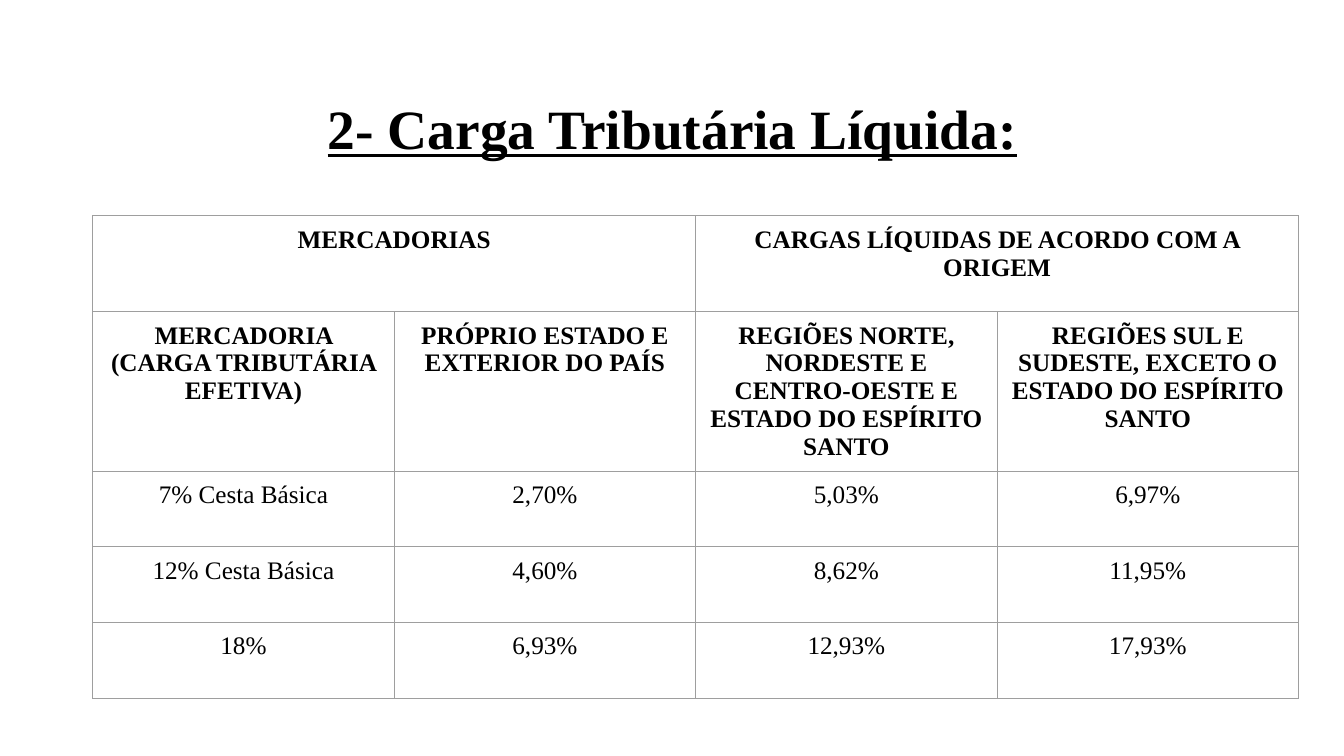
import pptx
import pptx.util
import pptx.dml.color
import pptx.enum.text
import pptx.oxml
import pptx.oxml.ns
import lxml.etree

Inches, Pt = pptx.util.Inches, pptx.util.Pt
BLACK = pptx.dml.color.RGBColor(0x00, 0x00, 0x00)
WHITE = pptx.dml.color.RGBColor(0xFF, 0xFF, 0xFF)
GREY = pptx.dml.color.RGBColor(0x9E, 0x9E, 0x9E)
FONT = "Times New Roman"
CENTER = pptx.enum.text.PP_ALIGN.CENTER

LEFT = 0.92
COL_WIDTH = 2.99
ROW_HEIGHTS = [0.95, 1.58, 0.75, 0.75, 0.75]
ROWS = [
    ["MERCADORIAS", "", "CARGAS LÍQUIDAS DE ACORDO COM A ORIGEM", ""],
    ["MERCADORIA (CARGA TRIBUTÁRIA EFETIVA)",
     "PRÓPRIO ESTADO E EXTERIOR DO PAÍS",
     "REGIÕES NORTE, NORDESTE E CENTRO-OESTE E ESTADO DO ESPÍRITO SANTO",
     "REGIÕES SUL E SUDESTE, EXCETO O ESTADO DO ESPÍRITO SANTO"],
    ["7% Cesta Básica", "2,70%", "5,03%", "6,97%"],
    ["12% Cesta Básica", "4,60%", "8,62%", "11,95%"],
    ["18%", "6,93%", "12,93%", "17,93%"],
]
HEADER_ROWS = 2


def format_paragraph(p, size, bold):
    p.alignment = CENTER
    for r in p.runs:
        r.font.name = FONT
        r.font.size = Pt(size)
        r.font.bold = bold
        r.font.color.rgb = BLACK


def add_borders(cell):
    tcPr = cell._tc.get_or_add_tcPr()
    for i, side in enumerate(("lnL", "lnR", "lnT", "lnB")):
        ln = pptx.oxml.parse_xml(
            f'<a:{side} xmlns:a="http://schemas.openxmlformats.org/drawingml/2006/main" '
            f'w="{Pt(0.75)}"><a:solidFill><a:srgbClr val="{GREY}"/></a:solidFill></a:{side}>')
        tcPr.insert(i, ln)


prs = pptx.Presentation()
prs.slide_width = Inches(13.33)
prs.slide_height = Inches(7.5)
s = prs.slides.add_slide(prs.slide_layouts[5])
s.background.fill.solid()
s.background.fill.fore_color.rgb = WHITE

# Title
title = s.shapes.title
title.left, title.top = Inches(LEFT), Inches(0.85)
title.width, title.height = Inches(11.5), Inches(0.9)
tf = title.text_frame
tf.text = "2- Carga Tributária Líquida:"
tf.word_wrap = True
tf.vertical_anchor = pptx.enum.text.MSO_ANCHOR.MIDDLE
p = tf.paragraphs[0]
p.line_spacing = 0.9
format_paragraph(p, 39.6, True)
p.runs[0].font.underline = True

# Table of net tax rates
table = s.shapes.add_table(
    len(ROWS), len(ROWS[0]), Inches(LEFT), Inches(2.14),
    Inches(COL_WIDTH * len(ROWS[0])), Inches(sum(ROW_HEIGHTS))).table
table.first_row = table.horz_banding = False
for col in table.columns:
    col.width = Inches(COL_WIDTH)
for row, height in zip(table.rows, ROW_HEIGHTS):
    row.height = Inches(height)

for i, values in enumerate(ROWS):
    for j, value in enumerate(values):
        cell = table.cell(i, j)
        cell.fill.background()
        cell.margin_left = cell.margin_right = Inches(0.1)
        cell.margin_top = cell.margin_bottom = Inches(0.1)
        cell.text_frame.text = value
        format_paragraph(cell.text_frame.paragraphs[0], 18, i < HEADER_ROWS)
        add_borders(cell)

# Top header spans two columns per group
for j in (0, 2):
    table.cell(0, j).merge(table.cell(0, j + 1))

prs.save("out.pptx")
